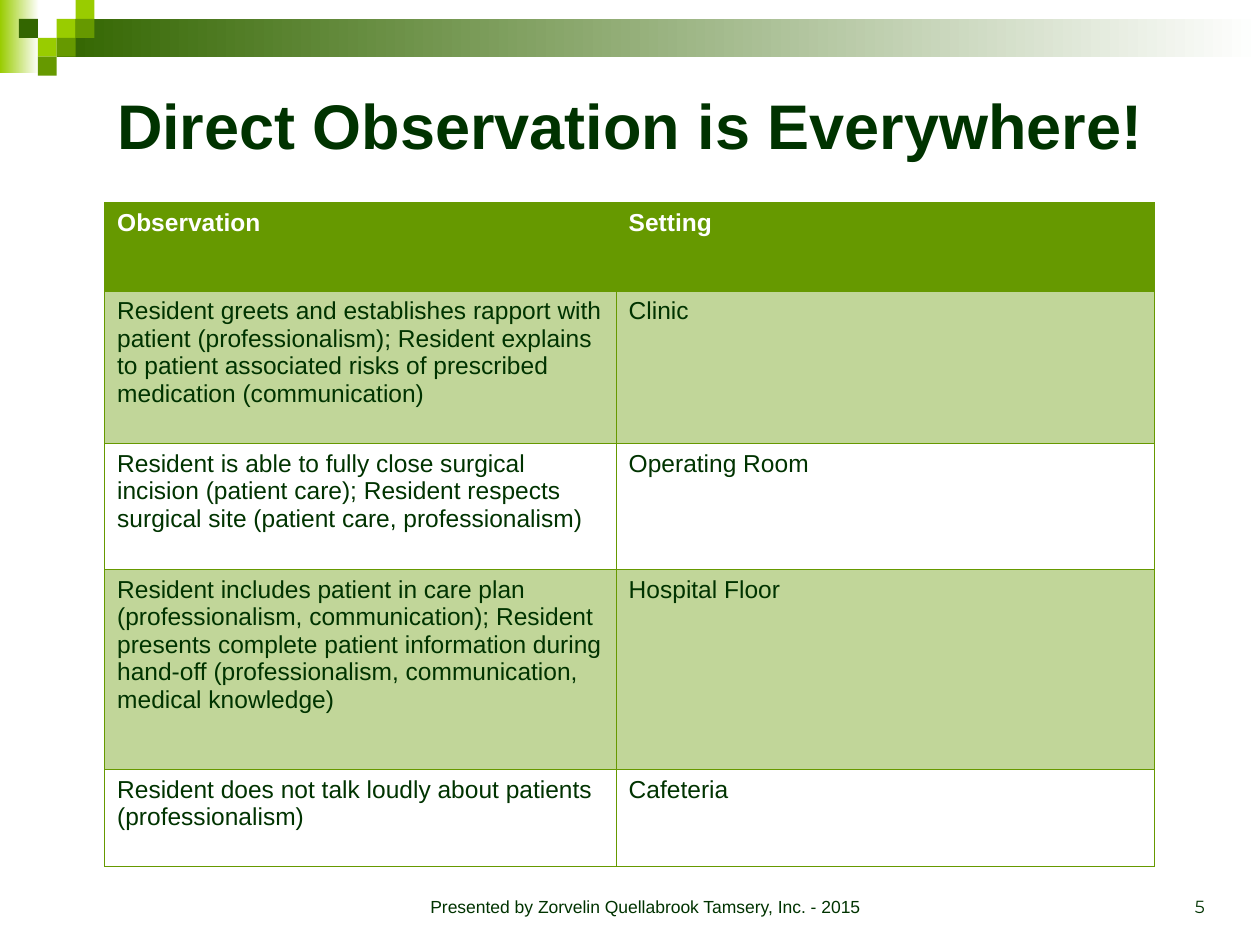
from lxml import etree
from pptx import Presentation
from pptx import util as u
from pptx.dml.color import RGBColor
from pptx.enum import shapes, text
from pptx.oxml import ns

LIME = RGBColor(0x99, 0xCC, 0x00)
GREEN = RGBColor(0x66, 0x99, 0x00)
FOREST = RGBColor(0x33, 0x66, 0x00)
INK = RGBColor(0x00, 0x33, 0x00)
WHITE = RGBColor(0xFF, 0xFF, 0xFF)

WIDTH, HEIGHT = 10, 7.5
SQUARE = 0.15  # side of one square in the corner mosaic

ROWS = [
    ("Observation", "Setting"),
    ("Resident greets and establishes rapport with patient (professionalism); "
     "Resident explains to patient associated risks of prescribed medication "
     "(communication)", "Clinic"),
    ("Resident is able to fully close surgical incision (patient care); "
     "Resident respects surgical site (patient care, professionalism)",
     "Operating Room"),
    ("Resident includes patient in care plan (professionalism, communication); "
     "Resident presents complete patient information during hand-off "
     "(professionalism, communication, medical knowledge)", "Hospital Floor"),
    ("Resident does not talk loudly about patients (professionalism)",
     "Cafeteria"),
]
COLUMN_WIDTHS = (4.06, 4.27)
ROW_HEIGHTS = (0.7, 1.21, 1, 1.59, 0.77)


def inches(*lengths):
    return [u.Inches(length) for length in lengths]


def write(frame, wording, size=14, color=INK, bold=False, font="Arial",
          align=text.PP_ALIGN.LEFT, anchor=None):
    """Put one formatted paragraph into a text frame."""
    frame.word_wrap = True
    if anchor is not None:
        frame.vertical_anchor = anchor
    para = frame.paragraphs[0]
    para.alignment = align
    span = para.add_run()
    span.text = wording
    span.font.name, span.font.size, span.font.bold = font, u.Pt(size), bold
    span.font.color.rgb = color


def add_block(page, left, top, width, height, color, fade=False):
    """Add a borderless rectangle, plain or fading to white at the right."""
    block = page.shapes.add_shape(shapes.MSO_SHAPE.RECTANGLE,
                                  *inches(left, top, width, height))
    block.shadow.inherit = False
    block.line.fill.background()
    if fade:
        block.fill.gradient()
        block.fill.gradient_angle = 0
        for stop, shade, position in zip(block.fill.gradient_stops,
                                         (color, WHITE), (0, 1)):
            stop.color.rgb = shade
            stop.position = position
    else:
        block.fill.solid()
        block.fill.fore_color.rgb = color


def add_banner(page, left, top, width):
    """Fading bars with the mosaic of squares in the corner."""
    add_block(page, left, top, 0.31, 0.58, LIME, fade=True)
    add_block(page, left + 3 * SQUARE, top + SQUARE, width - 3 * SQUARE,
              2 * SQUARE, FOREST, fade=True)
    mosaic = [(3, 1, LIME), (4, 0, LIME), (4, 1, GREEN), (2, 2, LIME),
              (1, 1, FOREST), (3, 2, GREEN), (2, 3, GREEN)]
    for column, row, color in mosaic:
        add_block(page, left + column * SQUARE, top + row * SQUARE,
                  SQUARE, SQUARE, color)


def add_title(page, left, top, width, height):
    title = page.shapes.title
    title.left, title.top, title.width, title.height = inches(
        left, top, width, height)
    write(title.text_frame, "Direct Observation is Everywhere!", size=36,
          bold=True, align=text.PP_ALIGN.CENTER,
          anchor=text.MSO_ANCHOR.MIDDLE)


def add_child(parent, tag, **attributes):
    return etree.SubElement(parent, ns.qn(tag), **attributes)


def set_borders(cell, bottom):
    properties = cell._tc.get_or_add_tcPr()
    for side in "LRTB":
        line = add_child(properties, f"a:ln{side}", w=str(u.Pt(0.75)))
        fill = add_child(line, "a:solidFill")
        add_child(fill, "a:srgbClr", val=str(bottom if side == "B" else GREEN))


def set_fill(cell, row):
    """Solid header, then tinted and clear rows in turn."""
    if row and row % 2 == 0:
        cell.fill.background()
        return
    cell.fill.solid()
    cell.fill.fore_color.rgb = GREEN
    if row:
        color = cell._tc.tcPr.find(ns.qn("a:solidFill"))[0]
        add_child(color, "a:alpha", val="40000")


def add_observations(page, left, top, width, height):
    table = page.shapes.add_table(len(ROWS), len(COLUMN_WIDTHS),
                                  *inches(left, top, width, height)).table
    for column, size in zip(table.columns, COLUMN_WIDTHS):
        column.width = u.Inches(size)
    for index, (row, size) in enumerate(zip(table.rows, ROW_HEIGHTS)):
        row.height = u.Inches(size)
        header = index == 0
        for cell, wording in zip(row.cells, ROWS[index]):
            set_borders(cell, bottom=WHITE if header else GREEN)
            set_fill(cell, index)
            write(cell.text_frame, wording, bold=header,
                  color=WHITE if header else INK)


def add_footer(page, top, height):
    """Presenter line in the middle and page number at the right."""
    parts = [
        (3.08, 4.08, "Presented by Zorvelin Quellabrook Tamsery, Inc. - 2015",
         "Arial", text.PP_ALIGN.CENTER),
        (7.33, 2.33, "5", "Montserrat", text.PP_ALIGN.RIGHT),
    ]
    for left, width, wording, font, align in parts:
        box = page.shapes.add_textbox(*inches(left, top, width, height))
        write(box.text_frame, wording, size=10, font=font, align=align,
              anchor=text.MSO_ANCHOR.BOTTOM)


def main():
    deck = Presentation()
    deck.slide_width, deck.slide_height = inches(WIDTH, HEIGHT)
    page = deck.slides.add_slide(deck.slide_layouts.get_by_name("Title Only"))
    add_banner(page, 0, 0, WIDTH)
    add_title(page, 0.05 * WIDTH, 0.49, 0.9 * WIDTH, 0.99)
    add_observations(page, 0.83, 1.61, sum(COLUMN_WIDTHS), sum(ROW_HEIGHTS))
    add_footer(page, 6.83, 0.5)
    deck.save("out.pptx")


if __name__ == "__main__":
    main()
